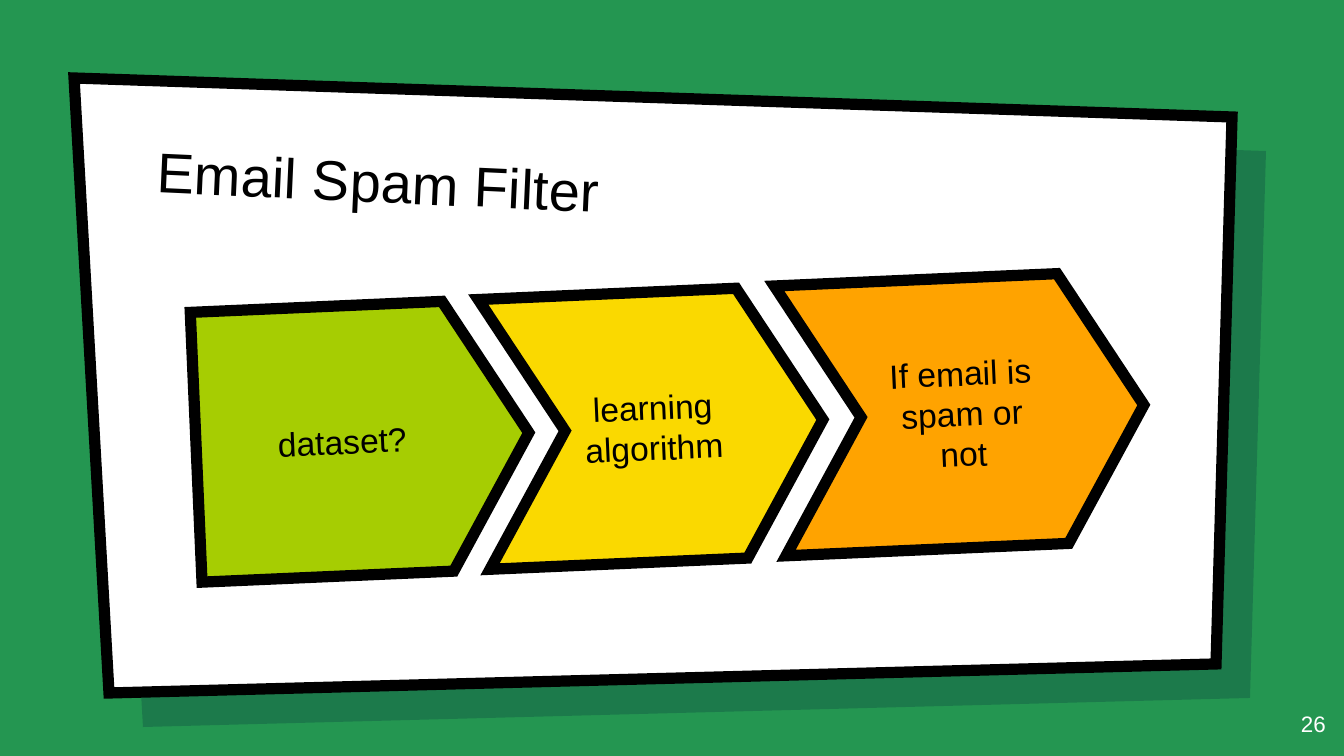
from lxml import etree
from pptx import Presentation, util as u
from pptx.dml.color import RGBColor
from pptx.enum import shapes, text
from pptx.oxml.ns import qn

PX = 914400 / 134.4
SIZE = 1344, 756
GREEN, WHITE, BLACK, NAVY = "249651", "FFFFFF", "000000", "001936"
PANEL = [(74, 78), (1232, 117), (1216, 664), (109, 693)]
PANEL_SHADOW = 34
TITLE = "Email Spam Filter", (144, 129, 1034, 112)
NUMBER = "26", (1258, 697, 81, 58)
PENTAGON, CHEVRON = shapes.MSO_SHAPE.PENTAGON, shapes.MSO_SHAPE.CHEVRON
STEPS = [
    ("If email is spam or not", CHEVRON, "FFA300", (780, 278, 364, 270)),
    ("learning algorithm", CHEVRON, "FAD900", (484, 292, 339, 270)),
    ("dataset?", PENTAGON, "A6CD02", (196, 305, 333, 270)),
]
LEFT, CENTER, RIGHT = text.PP_ALIGN.LEFT, text.PP_ALIGN.CENTER, text.PP_ALIGN.RIGHT
TOP, MIDDLE, BOTTOM = text.MSO_ANCHOR.TOP, text.MSO_ANCHOR.MIDDLE, text.MSO_ANCHOR.BOTTOM


def px(value):
    return round(value * PX)


def color(value):
    return RGBColor.from_string(value)


def apply(target, values):
    for name, value in values.items():
        setattr(target, name, value)


def place(shape, box, rotation):
    apply(shape, dict(zip(("left", "top", "width", "height"), map(px, box))))
    shape.rotation = rotation


def paint(shape, fill, outlined=True):
    shape.shadow.inherit = False
    shape.fill.solid()
    shape.fill.fore_color.rgb = color(fill)
    if outlined:
        shape.line.color.rgb = color(BLACK)
        shape.line.width = u.Pt(6)
        miter = etree.SubElement(shape.line._get_or_add_ln(), qn("a:miter"))
        miter.set("lim", "800000")
    else:
        shape.line.fill.background()


def write(shape, words, size, ink, align, anchor):
    frame = shape.text_frame
    margins = dict.fromkeys(
        ("margin_left", "margin_right", "margin_top", "margin_bottom"), u.Inches(0.1))
    apply(frame, {**margins, "word_wrap": True, "vertical_anchor": anchor,
                  "auto_size": text.MSO_AUTO_SIZE.NONE})
    para = frame.paragraphs[0]
    para.alignment = align
    span = para.add_run()
    span.text = words
    apply(span.font, {"name": "Arial", "size": u.Pt(size)})
    span.font.color.rgb = color(ink)


def add_panel(page, offset):
    points = [(x + offset, y + offset) for x, y in PANEL]
    builder = page.shapes.build_freeform(*points[0], scale=PX)
    builder.add_line_segments(points[1:], close=True)
    return builder.convert_to_shape()


def main():
    deck = Presentation()
    deck.slide_width, deck.slide_height = map(px, SIZE)
    page = deck.slides.add_slide(deck.slide_layouts[5])
    page.background.fill.solid()
    page.background.fill.fore_color.rgb = color(GREEN)

    shade = add_panel(page, PANEL_SHADOW)
    paint(shade, NAVY, outlined=False)
    tint = shade.fill._xPr.find(f".//{qn('a:srgbClr')}")
    etree.SubElement(tint, qn("a:alpha")).set("val", "22000")
    paint(add_panel(page, 0), WHITE)

    title = page.shapes.title
    page.shapes.element.append(title.element)
    words, box = TITLE
    place(title, box, 2.7)
    write(title, words, 30, BLACK, LEFT, BOTTOM)

    for words, kind, fill, box in STEPS:
        step = page.shapes.add_shape(kind, *map(px, box))
        place(step, box, 357.5)
        step.adjustments[0] = 0.3
        paint(step, fill)
        write(step, words, 18, BLACK, CENTER, MIDDLE)

    words, box = NUMBER
    number = page.shapes.add_textbox(*map(px, box))
    write(number, words, 12, WHITE, RIGHT, TOP)
    deck.save("out.pptx")


if __name__ == "__main__":
    main()
